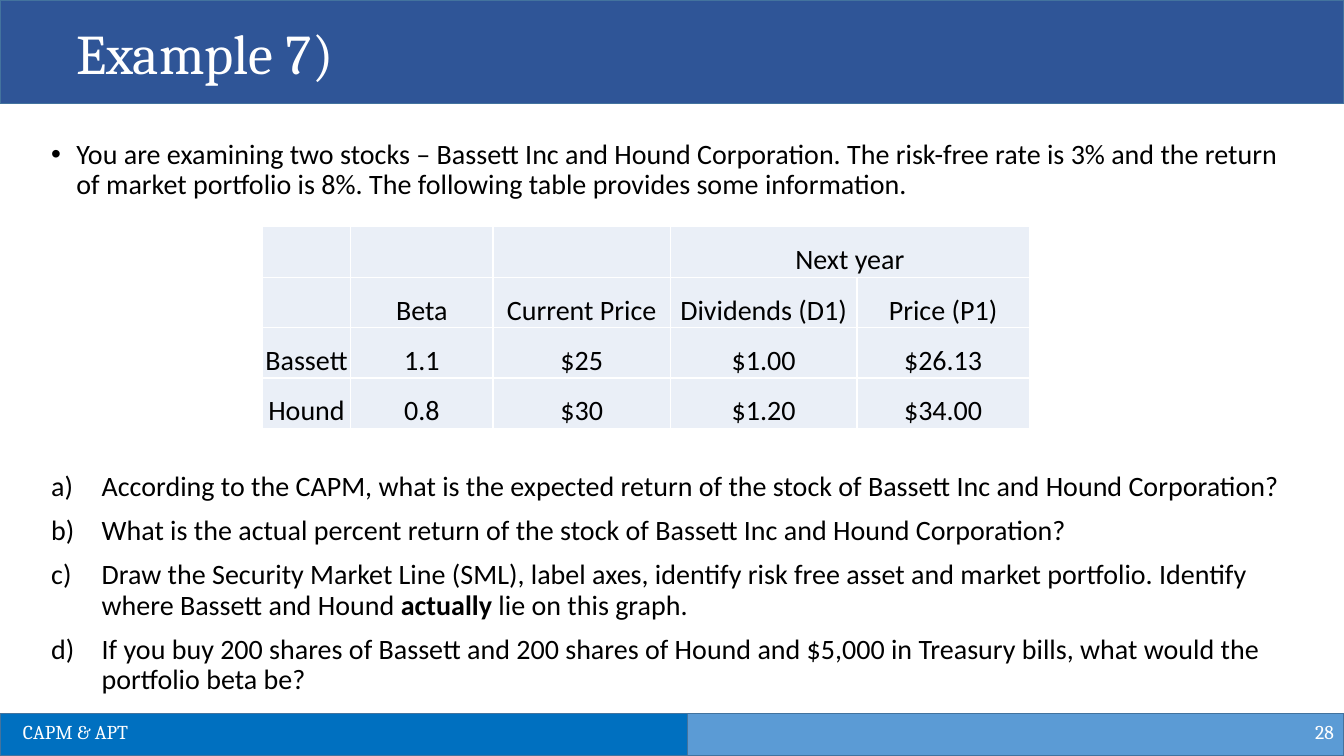
from dataclasses import dataclass

from lxml import etree
from pptx import Presentation
from pptx import util as u
from pptx.dml.color import RGBColor
from pptx.enum import shapes, text
from pptx.oxml import ns

PX = 9144  # EMU per px, 100 px to the inch
HEX = {
    "title": "2F5597", "left": "0070C0", "right": "5B9BD5", "edge": "43739E",
    "cell": "EAEFF7", "white": "FFFFFF", "black": "000000",
}
LEFT, MID, RIGHT = text.PP_ALIGN.LEFT, text.PP_ALIGN.CENTER, text.PP_ALIGN.RIGHT
TOP, CENTER = text.MSO_ANCHOR.TOP, text.MSO_ANCHOR.MIDDLE
GROW, FIXED = text.MSO_AUTO_SIZE.SHAPE_TO_FIT_TEXT, text.MSO_AUTO_SIZE.NONE


@dataclass
class Box:
    x: int
    y: int
    w: int
    h: int

    def emu(self) -> list[int]:
        return [n * PX for n in (self.x, self.y, self.w, self.h)]


@dataclass
class Band:
    box: Box
    color: str


@dataclass
class Label:
    box: Box
    words: str
    size: int
    align: object = LEFT
    anchor: object = TOP
    fit: object = GROW


@dataclass
class Item:
    """A list paragraph; every second run is bold."""
    runs: list[str]
    indent: int = 50
    before: int = 10
    mark: tuple[str, str, str] = ("buAutoNum", "type", "alphaLcParenR")


BANDS = [
    Band(Box(0, 0, 1333, 103), "title"),
    Band(Box(0, 708, 682, 42), "left"),
    Band(Box(682, 708, 651, 42), "right"),
]
LABELS = [
    Label(Box(66, 13, 1208, 77), "Example 7)", 40),
    Label(Box(1033, 706, 300, 40), "28", 14, RIGHT, CENTER, FIXED),
    Label(Box(13, 709, 554, 34), "CAPM & APT", 14),
]
BODY = Box(41, 134, 1259, 570)
ITEMS = [
    Item(["You are examining two stocks – Bassett Inc and Hound Corporation. "
          "The risk-free rate is 3% and the return of market portfolio is 8%. "
          "The following table provides some information."],
         indent=25, mark=("buChar", "char", "•")),
    Item(["According to the CAPM, what is the expected return of the stock of "
          "Bassett Inc and Hound Corporation?"], before=194),  # clears the table
    Item(["What is the actual percent return of the stock of Bassett Inc and "
          "Hound Corporation?"]),
    Item(["Draw the Security Market Line (SML), label axes, identify risk free "
          "asset and market portfolio. Identify where Bassett and Hound ",
          "actually", " lie on this graph."]),
    Item(["If you buy 200 shares of Bassett and 200 shares of Hound and $5,000 "
          "in Treasury bills, what would the portfolio beta be?"]),
]
GRID = Box(260, 225, 761, 200)
COLS = [88, 141, 176, 185, 171]
ROWS = [
    ["", "", "", "Next year", ""],
    ["", "Beta", "Current Price", "Dividends (D1)", "Price (P1)"],
    ["Bassett", "1.1", "$25", "$1.00", "$26.13"],
    ["Hound", "0.8", "$30", "$1.20", "$34.00"],
]


def rgb(name: str) -> RGBColor:
    return RGBColor.from_string(HEX[name])


def put(item, **values) -> None:
    """Set each named attribute on the item."""
    for name, value in values.items():
        setattr(item, name, value)


def paint(item, color: str) -> None:
    item.fill.solid()
    item.fill.fore_color.rgb = rgb(color)


def style(font, name: str, size: int, color: str, bold: bool = False) -> None:
    put(font, name=name, size=u.Pt(size), bold=bold)
    font.color.rgb = rgb(color)


def draw_band(slide, band: Band) -> None:
    shape = slide.shapes.add_shape(shapes.MSO_SHAPE.RECTANGLE, *band.box.emu())
    shape.shadow.inherit = False
    paint(shape, band.color)
    shape.line.color.rgb = rgb("edge")
    shape.line.width = u.Pt(1)


def draw_label(slide, label: Label) -> None:
    frame = slide.shapes.add_textbox(*label.box.emu()).text_frame
    put(frame, word_wrap=True, auto_size=label.fit, vertical_anchor=label.anchor)
    para = frame.paragraphs[0]
    para.alignment = label.align
    run = para.add_run()
    run.text = label.words
    style(run.font, "Cambria", label.size, "white")


def draw_list(slide, box: Box, items: list[Item]) -> None:
    frame = slide.shapes.add_textbox(*box.emu()).text_frame
    put(frame, word_wrap=True, auto_size=FIXED)
    for i, item in enumerate(items):
        para = frame.add_paragraph() if i else frame.paragraphs[0]
        put(para, line_spacing=0.9, space_before=u.Pt(item.before))
        props = para._p.get_or_add_pPr()
        props.set("marL", str(item.indent * PX))
        props.set("indent", str(-item.indent * PX))
        etree.SubElement(props, ns.qn("a:buFont")).set("typeface", "Arial")
        tag, key, value = item.mark
        etree.SubElement(props, ns.qn(f"a:{tag}")).set(key, value)
        for j, words in enumerate(item.runs):
            run = para.add_run()
            run.text = words
            style(run.font, "Calibri", 20, "black", bold=j % 2 == 1)


def edge(cell, color: str) -> None:
    """Give the cell a thin line on all four sides."""
    props = cell._tc.get_or_add_tcPr()
    for side in "LRTB":
        line = etree.SubElement(props, ns.qn(f"a:ln{side}"), w=str(u.Pt(1)))
        fill = etree.SubElement(line, ns.qn("a:solidFill"))
        etree.SubElement(fill, ns.qn("a:srgbClr"), val=HEX[color])


def draw_table(slide, box: Box) -> None:
    table = slide.shapes.add_table(len(ROWS), len(COLS), *box.emu()).table
    put(table, first_row=False, horz_banding=False)
    for col, width in zip(table.columns, COLS):
        col.width = width * PX
    for r, row in enumerate(ROWS):
        for c, words in enumerate(row):
            cell = table.cell(r, c)
            edge(cell, "white")
            paint(cell, "cell")
            put(cell, margin_left=PX, margin_right=PX, margin_top=PX,
                margin_bottom=0, vertical_anchor=text.MSO_ANCHOR.BOTTOM)
            para = cell.text_frame.paragraphs[0]
            put(para, alignment=MID, line_spacing=1.15)
            if words:
                run = para.add_run()
                run.text = words
                style(run.font, "Calibri", 20, "black")
    table.cell(0, 3).merge(table.cell(0, 4))


def main() -> None:
    deck = Presentation()
    put(deck, slide_width=1333 * PX, slide_height=750 * PX)
    slide = deck.slides.add_slide(deck.slide_layouts[6])
    for band in BANDS:
        draw_band(slide, band)
    for label in LABELS:
        draw_label(slide, label)
    draw_list(slide, BODY, ITEMS)
    draw_table(slide, GRID)
    deck.save("out.pptx")


if __name__ == "__main__":
    main()
